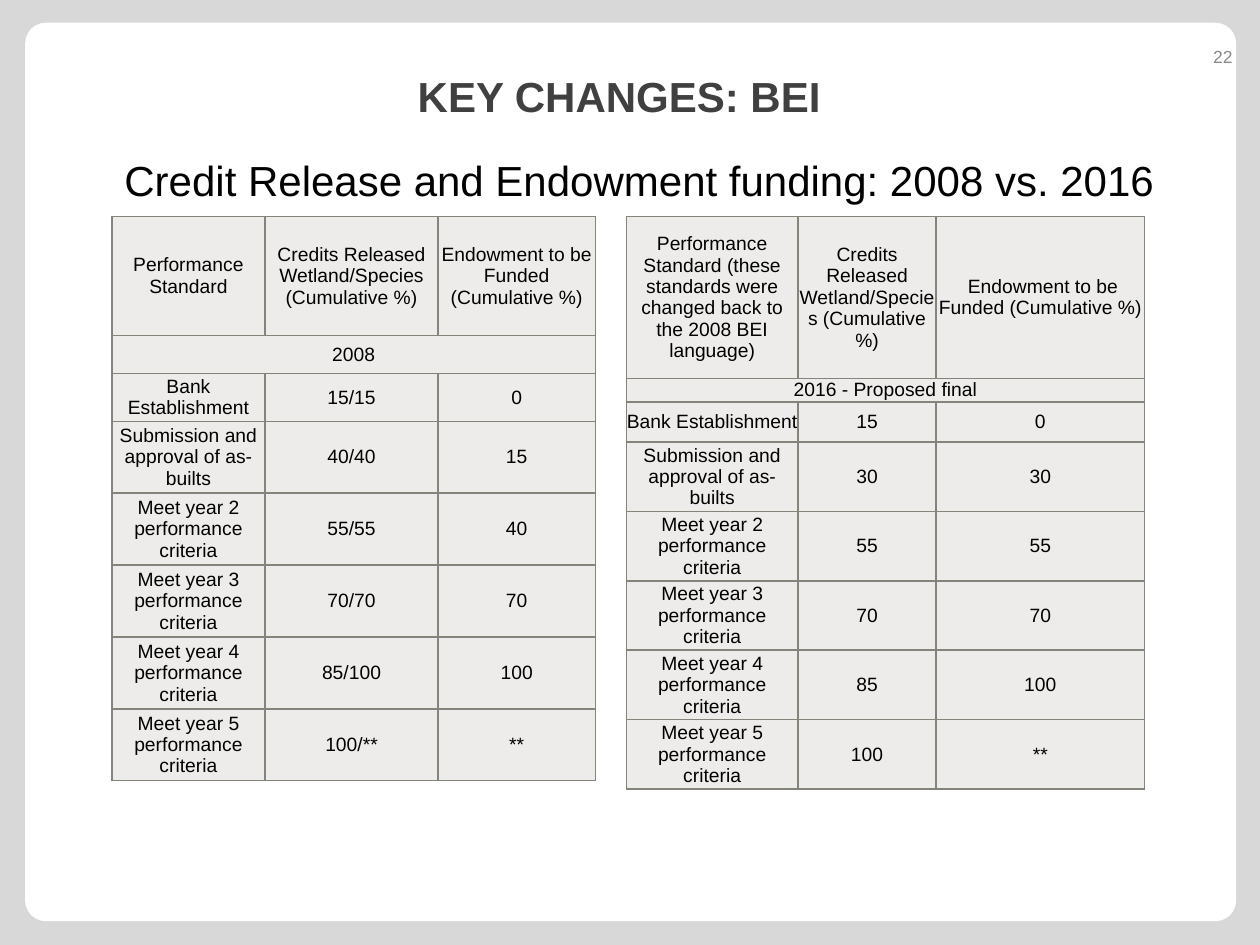
from dataclasses import dataclass

from lxml.etree import SubElement
from pptx import Presentation
from pptx.dml.color import RGBColor
from pptx.enum.shapes import MSO_SHAPE as Shape
from pptx.enum.text import MSO_ANCHOR as Anchor, PP_ALIGN as Align
from pptx.oxml.ns import qn
from pptx.util import Pt


@dataclass(frozen=True)
class Theme:
    font: str = "Arial"
    backdrop: str = "D8D8D8"
    panel: str = "FFFFFF"
    title: str = "404040"
    text: str = "000000"
    number: str = "898989"
    cell: str = "EDECEB"
    border: str = "83847A"
    heading_size: int = 24
    cell_size: int = 11
    number_size: int = 10


theme = Theme()


def write(frame, text, size, color, align, anchor=Anchor.MIDDLE, bold=False):
    """Fill a text frame with one paragraph; a newline becomes a line break."""
    frame.word_wrap = True
    frame.vertical_anchor = anchor
    para = frame.paragraphs[0]
    para.alignment = align
    for index, line in enumerate(text.split("\n")):
        if index:
            para.add_line_break()
        span = para.add_run()
        span.text = line
        span.font.name = theme.font
        span.font.size = Pt(size)
        span.font.bold = bold
        span.font.color.rgb = RGBColor.from_string(color)


def style_cell(cell):
    """Give a cell four borders, a fill and no margins."""
    properties = cell._tc.get_or_add_tcPr()
    for side in ("lnL", "lnR", "lnT", "lnB"):
        line = SubElement(properties, qn(f"a:{side}"), w=str(Pt(1)))
        fill = SubElement(line, qn("a:solidFill"))
        SubElement(fill, qn("a:srgbClr"), val=theme.border)
    cell.fill.solid()
    cell.fill.fore_color.rgb = RGBColor.from_string(theme.cell)
    cell.margin_left = cell.margin_right = cell.margin_top = cell.margin_bottom = 0


deck = Presentation()
deck.slide_width, deck.slide_height = Pt(720), Pt(540)
page = deck.slides.add_slide(deck.slide_layouts[6])
page.background.fill.solid()
page.background.fill.fore_color.rgb = RGBColor.from_string(theme.backdrop)

panel = page.shapes.add_shape(Shape.ROUNDED_RECTANGLE, Pt(14.4), Pt(13), Pt(692), Pt(513.4))
panel.adjustments[0] = 0.023
panel.shadow.inherit = False
panel.fill.solid()
panel.fill.fore_color.rgb = RGBColor.from_string(theme.panel)
panel.line.fill.background()

title = page.shapes.add_textbox(Pt(23.8), Pt(21.6), Pt(660), Pt(66))
write(title.text_frame, "KEY CHANGES: BEI", theme.heading_size, theme.title,
      Align.CENTER, bold=True)

# Credit release schedules, one table per year
milestones = ["Bank Establishment", "Submission and approval of as-builts"]
milestones += [f"Meet year {year} performance criteria" for year in range(2, 6)]
credits_heading = "Credits Released Wetland/Species (Cumulative %)"

schedules = [
    dict(
        left=64, columns=[87.4, 99, 89.8], rows=[68.2, 21.6, 27.4] + [41.1] * 5,
        headings=["Performance Standard", credits_heading,
                  "Endowment to be Funded\n(Cumulative %)"],
        band="2008",
        credits=["15/15", "40/40", "55/55", "70/70", "85/100", "100/**"],
        endowment=["0", "15", "40", "70", "100", "**"],
    ),
    dict(
        left=358, columns=[98, 79, 119], rows=[92.8, 10.8, 23] + [38.7] * 5,
        headings=["Performance Standard (these standards were changed back to "
                  "the 2008 BEI language)", credits_heading,
                  " Endowment to be Funded (Cumulative %)"],
        band="2016 - Proposed final",
        credits=["15", "30", "55", "70", "85", "100"],
        endowment=["0", "30", "55", "70", "100", "**"],
    ),
]

for schedule in schedules:
    columns, rows = schedule["columns"], schedule["rows"]
    content = [schedule["headings"], [schedule["band"]]]
    content += zip(milestones, schedule["credits"], schedule["endowment"])
    table = page.shapes.add_table(len(rows), len(columns), Pt(schedule["left"]), Pt(123.6),
                                  Pt(sum(columns)), Pt(sum(rows))).table
    table.first_row = table.horz_banding = False
    for column, width in zip(table.columns, columns):
        column.width = Pt(width)
    for row, height in zip(table.rows, rows):
        row.height = Pt(height)
    for cell in table.iter_cells():
        style_cell(cell)
    table.cell(1, 0).merge(table.cell(1, 2))
    for row_index, texts in enumerate(content):
        for column_index, text in enumerate(texts):
            cell = table.cell(row_index, column_index)
            write(cell.text_frame, text, theme.cell_size, theme.text, Align.CENTER)
            cell.vertical_anchor = Anchor.MIDDLE

number = page.shapes.add_textbox(Pt(653.8), Pt(18), Pt(57.6), Pt(28.8))
write(number.text_frame, "22", theme.number_size, theme.number, Align.RIGHT)

subtitle = page.shapes.add_textbox(Pt(64), Pt(85), Pt(605), Pt(36))
write(subtitle.text_frame, "Credit Release and Endowment funding: 2008 vs. 2016",
      theme.heading_size, theme.text, Align.LEFT, Anchor.TOP)

deck.save("out.pptx")
